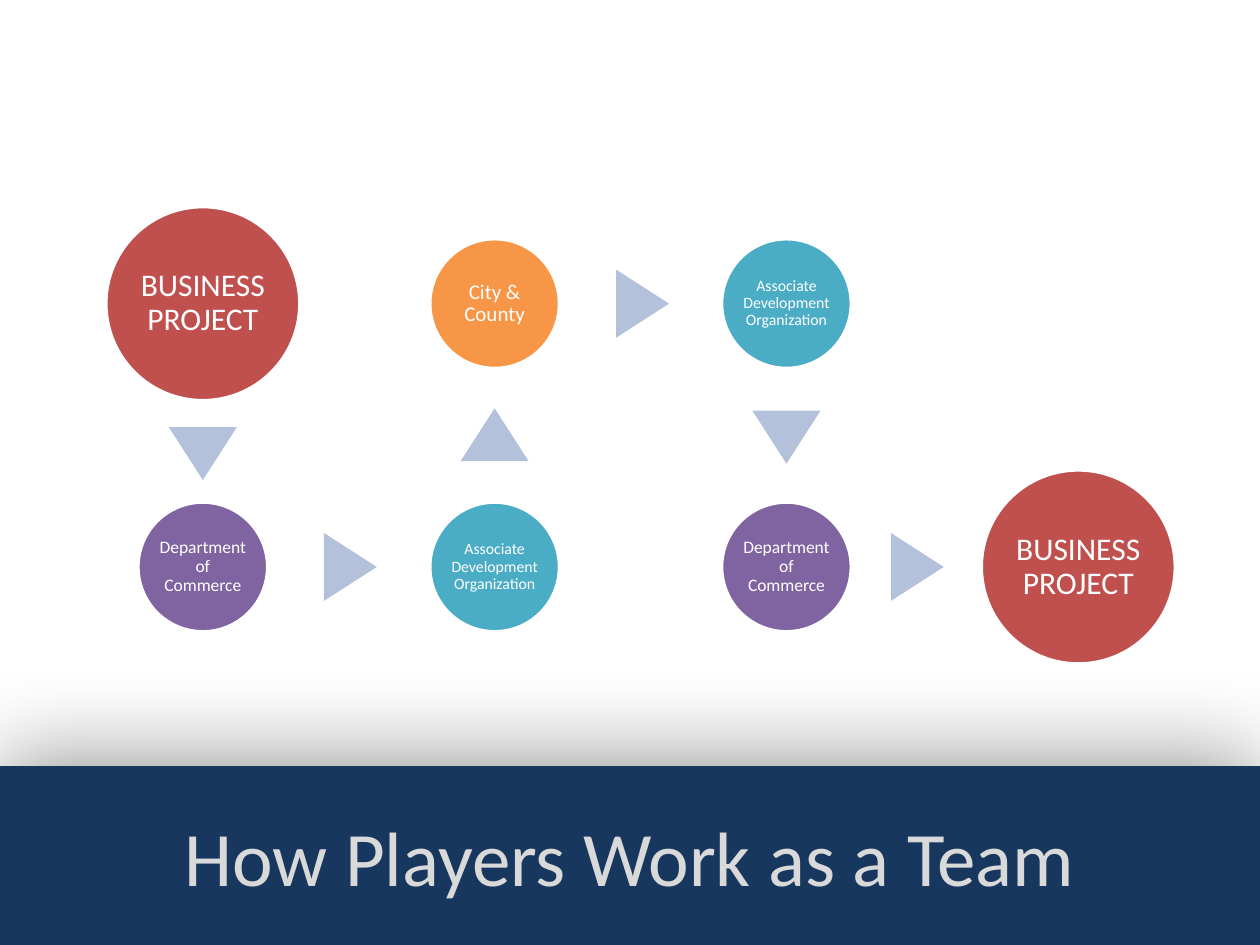
"""Build the slide showing how the players pass a project along as a team."""
from lxml import etree
from pptx import Presentation
from pptx.dml.color import RGBColor
from pptx.enum.shapes import MSO_SHAPE
from pptx.enum.text import MSO_ANCHOR, PP_ALIGN
from pptx.oxml import parse_xml
from pptx.util import Inches, Pt


def paint(color_format, color):
    color_format.rgb = RGBColor.from_string(color)


def add_filled(kind, left, top, width, height, color):
    shape = page.shapes.add_shape(kind, Inches(left), Inches(top), Inches(width), Inches(height))
    shape.shadow.inherit = False
    shape.fill.solid()
    paint(shape.fill.fore_color, color)
    shape.line.fill.background()
    return shape


deck = Presentation()
deck.slide_width, deck.slide_height = Inches(10), Inches(7.5)
page = deck.slides.add_slide(deck.slide_layouts[5])

title = page.shapes.title
title.left, title.top, title.width, title.height = Inches(0.5), Inches(6.17), Inches(9), Inches(1.25)
title.text_frame.text = "How Players Work as a Team"
title.text_frame.vertical_anchor = MSO_ANCHOR.MIDDLE
heading = title.text_frame.paragraphs[0]
heading.alignment = PP_ALIGN.CENTER
heading.font.size = Pt(44)
heading.font.name = "Calibri"
paint(heading.font.color, "D9D9D9")

band = add_filled(MSO_SHAPE.RECTANGLE, 0, 6.08, 10, 1.42, "17375E")
title.element.addprevious(band.element)
namespace = "http://schemas.openxmlformats.org/drawingml/2006/main"
effects = band.element.spPr.find(f"{{{namespace}}}effectLst")
effects.append(parse_xml(
    f'<a:outerShdw xmlns:a="{namespace}" blurRad="{Pt(53)}" dist="{Pt(5)}" dir="16200000" rotWithShape="0">'
    '<a:srgbClr val="000000"><a:alpha val="40000"/></a:srgbClr></a:outerShdw>'))

columns = [1.61 + 2.316 * index for index in range(4)]
upper, lower = 2.41, 4.5
business = ("BUSINESS PROJECT", "C0504D", 1.54, 18, 0.03)
commerce = ("Department of Commerce", "8064A2", 1.03, 10, 0.01)
associate = ("Associate Development Organization", "4BACC6", 1.03, 9, 0.01)
city = ("City & County", "F79646", 1.03, 12, 0.02)
players = [
    (0, upper, business),
    (0, lower, commerce),
    (1, lower, associate),
    (1, upper, city),
    (2, upper, associate),
    (2, lower, commerce),
    (3, lower, business),
]
for column, middle, (label, color, diameter, size, inset) in players:
    circle = add_filled(MSO_SHAPE.OVAL, columns[column] - diameter / 2, middle - diameter / 2,
                        diameter, diameter, color)
    circle.line.width = Pt(2)
    paint(circle.line.color, "FFFFFF")
    frame = circle.text_frame
    frame.word_wrap = True
    frame.vertical_anchor = MSO_ANCHOR.MIDDLE
    frame.margin_left = frame.margin_right = frame.margin_top = frame.margin_bottom = Inches(inset)
    frame.text = label
    para = frame.paragraphs[0]
    para.alignment = PP_ALIGN.CENTER
    para.line_spacing = 0.9
    para.font.size = Pt(size)
    para.font.name = "Calibri"
    paint(para.font.color, "FFFFFF")

arrow_width, arrow_height = 0.54, 0.42
arrows = [
    (columns[0], 3.6, 180),
    (2.78, lower, 90),
    (columns[1], 3.45, 0),
    (5.1, upper, 90),
    (columns[2], 3.47, 180),
    (7.28, lower, 90),
]
for center, middle, rotation in arrows:
    arrow = add_filled(MSO_SHAPE.ISOSCELES_TRIANGLE, center - arrow_width / 2, middle - arrow_height / 2,
                       arrow_width, arrow_height, "B3C1DB")
    arrow.rotation = rotation

deck.save("out.pptx")
